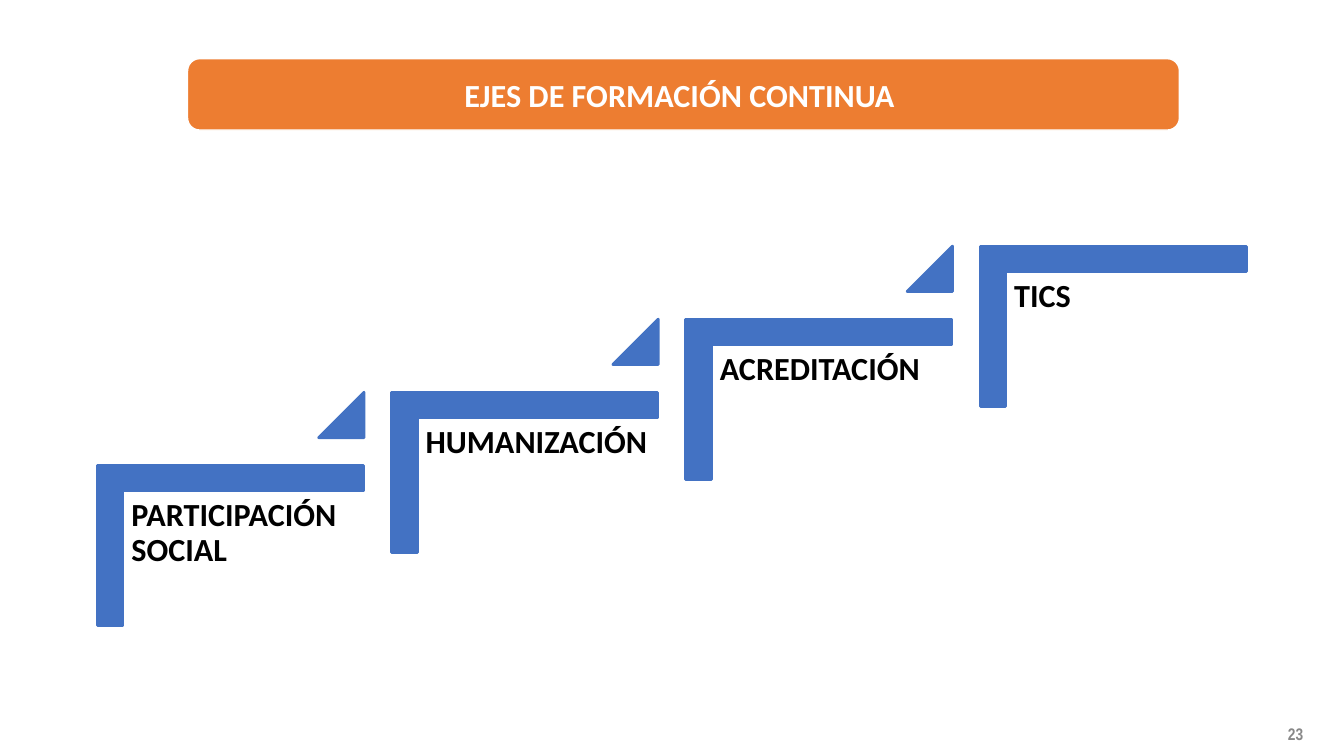
"""Build a slide with a title bar and four rising steps of training axes."""
from dataclasses import dataclass

from pptx import Presentation
from pptx.dml.color import RGBColor
from pptx.enum.shapes import MSO_SHAPE
from pptx.enum.text import MSO_ANCHOR, PP_ALIGN
from pptx.shapes.autoshape import Shape
from pptx.slide import Slide
from pptx.util import Pt

CORNER = MSO_SHAPE.CORNER
WEDGE = MSO_SHAPE.ISOSCELES_TRIANGLE
ROUND = MSO_SHAPE.ROUNDED_RECTANGLE
TOP, MIDDLE = MSO_ANCHOR.TOP, MSO_ANCHOR.MIDDLE
LEFT, CENTER = PP_ALIGN.LEFT, PP_ALIGN.CENTER


@dataclass(frozen=True)
class Theme:
    blue: str = "4372C3"
    orange: str = "ED7D31"
    white: str = "FFFFFF"
    black: str = "000000"
    gray: str = "888888"
    main: str = "Calibri"
    narrow: str = "Arial Narrow"
    large: float = 23
    small: float = 12


@dataclass(frozen=True)
class Box:
    left: float
    top: float
    width: float
    height: float

    def shift(self, dx: float, dy: float) -> "Box":
        return Box(self.left + dx, self.top + dy, self.width, self.height)

    def points(self) -> tuple[Pt, Pt, Pt, Pt]:
        return Pt(self.left), Pt(self.top), Pt(self.width), Pt(self.height)


@dataclass(frozen=True)
class Style:
    font: str
    size: float
    color: str
    align: PP_ALIGN = LEFT
    anchor: MSO_ANCHOR = TOP
    inset: tuple[float, float] = (5, 5)
    spacing: float = 1.0


THEME = Theme()
LABEL = Style(THEME.main, THEME.large, THEME.black, spacing=0.9)
TITLE = Style(THEME.main, THEME.large, THEME.white, CENTER, MIDDLE, (7.2, 7.2))
NUMBER = Style(THEME.narrow, THEME.small, THEME.gray, CENTER, MIDDLE, (7.2, 3.6))

AXES = ("PARTICIPACIÓN SOCIAL", "HUMANIZACIÓN", "ACREDITACIÓN", "TICS")
RUN, RISE = 210.2, -52.2
CORNER_BOX = Box(107.3, 294.6, 114.5, 190.1)
LABEL_BOX = Box(88.8, 351.3, 171.4, 150.5)
WEDGE_BOX = Box(227.6, 280.2, 32.4, 32.4)


def write(shape: Shape, text: str, style: Style) -> None:
    frame = shape.text_frame
    frame.word_wrap = True
    frame.vertical_anchor = style.anchor
    frame.margin_left = frame.margin_right = Pt(style.inset[0])
    frame.margin_top = frame.margin_bottom = Pt(style.inset[1])
    line = frame.paragraphs[0]
    line.text = text
    line.alignment = style.align
    line.line_spacing = style.spacing
    line.font.name = style.font
    line.font.size = Pt(style.size)
    line.font.bold = True
    line.font.color.rgb = RGBColor.from_string(style.color)


def add_text(slide: Slide, box: Box, text: str, style: Style) -> None:
    write(slide.shapes.add_textbox(*box.points()), text, style)


def add_form(slide: Slide, kind: MSO_SHAPE, box: Box, fill: str, edge: str,
             weight: float, *adjust: float) -> Shape:
    shape = slide.shapes.add_shape(kind, *box.points())
    shape.shadow.inherit = False
    shape.fill.solid()
    shape.fill.fore_color.rgb = RGBColor.from_string(fill)
    shape.line.color.rgb = RGBColor.from_string(edge)
    shape.line.width = Pt(weight)
    for index, value in enumerate(adjust):
        shape.adjustments[index] = value
    return shape


def add_step(slide: Slide, index: int, text: str) -> None:
    dx, dy = index * RUN, index * RISE
    blue = THEME.blue
    corner = add_form(slide, CORNER, CORNER_BOX.shift(dx, dy), blue, blue, 2, 0.16, 0.16)
    corner.rotation = 90
    add_text(slide, LABEL_BOX.shift(dx, dy), text, LABEL)
    if index < len(AXES) - 1:
        add_form(slide, WEDGE, WEDGE_BOX.shift(dx, dy), blue, blue, 2, 1)


def main() -> None:
    deck = Presentation()
    deck.slide_width, deck.slide_height = Pt(960), Pt(540)
    slide = deck.slides.add_slide(deck.slide_layouts[6])
    add_text(slide, Box(897.8, 509.8, 55.4, 28.8), "23", NUMBER)
    for index, text in enumerate(AXES):
        add_step(slide, index, text)
    bar = add_form(slide, ROUND, Box(134, 41.9, 708.5, 51), THEME.orange, THEME.white, 1, 0.17)
    write(bar, "EJES DE FORMACIÓN CONTINUA ", TITLE)
    deck.save("out.pptx")


if __name__ == "__main__":
    main()
